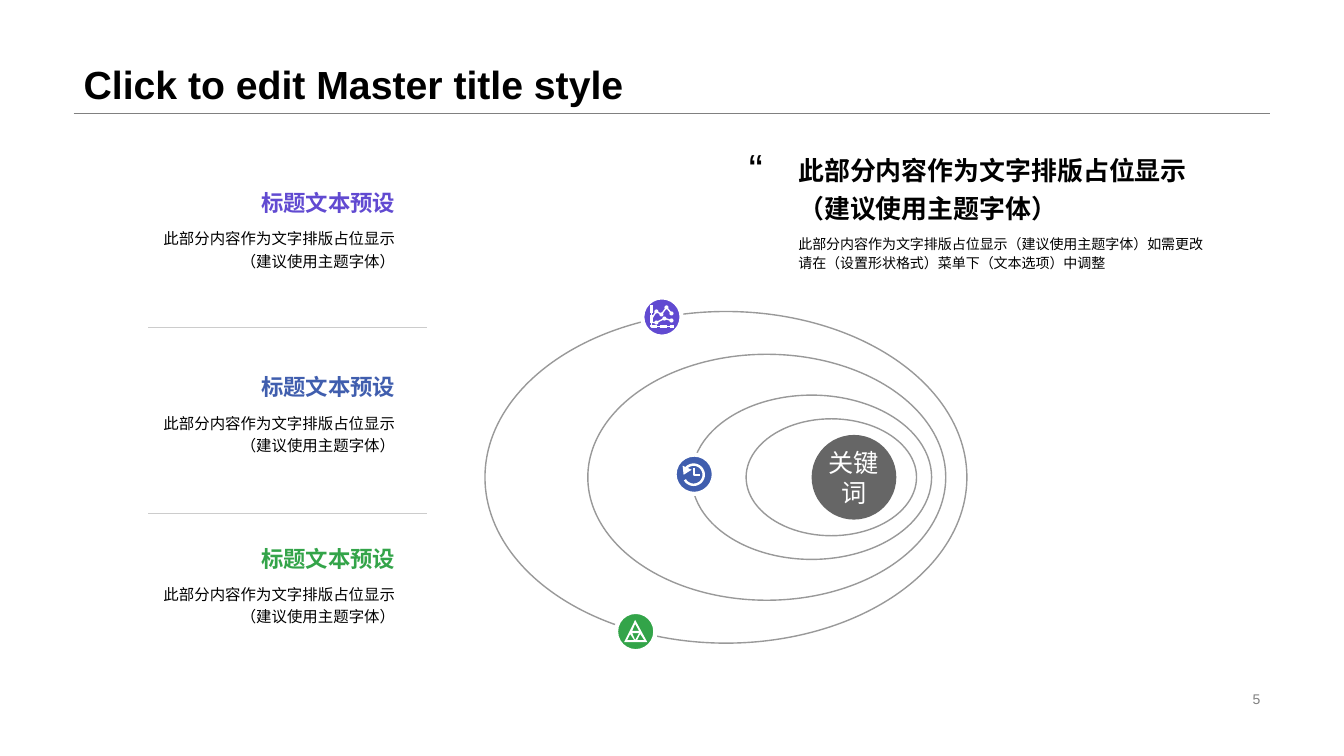
from math import cos, radians, sin

from lxml import etree
from pptx import Presentation
from pptx.dml.color import RGBColor
from pptx.enum import dml, shapes, text
from pptx.oxml.ns import qn
from pptx.util import Inches, Pt

BLACK = RGBColor(0x00, 0x00, 0x00)
WHITE = RGBColor(0xFF, 0xFF, 0xFF)
GREY = RGBColor(0x80, 0x80, 0x80)
CORE = RGBColor(0x66, 0x66, 0x66)
RING = RGBColor(0x99, 0x99, 0x99)
DIVIDER = RGBColor(0xCC, 0xCC, 0xCC)
PURPLE = RGBColor(0x61, 0x4A, 0xD1)
BLUE = RGBColor(0x40, 0x5E, 0xAE)
GREEN = RGBColor(0x33, 0xA4, 0x49)

LEFT, CENTER, RIGHT = text.PP_ALIGN.LEFT, text.PP_ALIGN.CENTER, text.PP_ALIGN.RIGHT
TOP, MIDDLE, BOTTOM = text.MSO_ANCHOR.TOP, text.MSO_ANCHOR.MIDDLE, text.MSO_ANCHOR.BOTTOM

HEADING = "标题文本预设"
SAMPLE = "此部分内容作为文字排版占位显示\v（建议使用主题字体）"
DETAIL = "此部分内容作为文字排版占位显示（建议使用主题字体）如需更改请在（设置形状格式）菜单下（文本选项）中调整"


def write(sp, words, size, color, bold=False, align=LEFT, anchor=MIDDLE, spacing=1.0):
    """Put one formatted paragraph into a shape."""
    tf = sp.text_frame
    tf.word_wrap = True
    tf.auto_size = text.MSO_AUTO_SIZE.NONE
    tf.vertical_anchor = anchor
    p = tf.paragraphs[0]
    p.text = words
    p.alignment = align
    p.line_spacing = spacing
    for r in p.runs:
        r.font.name = "Arial"
        r.font.size = Pt(size)
        r.font.bold = bold
        r.font.color.rgb = color


def add_text(s, x, y, w, h, words, size, color, **style):
    """Add a text box at the given place in inches."""
    box = s.shapes.add_textbox(Inches(x), Inches(y), Inches(w), Inches(h))
    write(box, words, size, color, **style)


def add_rule(s, x, y, w, color, width):
    """Add a horizontal line."""
    line = s.shapes.add_connector(
        shapes.MSO_CONNECTOR.STRAIGHT, Inches(x), Inches(y), Inches(x + w), Inches(y))
    line.line.color.rgb = color
    line.line.width = Pt(width)
    etree.SubElement(line._element.spPr, qn("a:effectLst"))


def add_ellipse(s, x, y, w, h, fill=None, line=None, width=1):
    """Add an ellipse with an optional fill and outline."""
    sp = s.shapes.add_shape(
        shapes.MSO_SHAPE.OVAL, Inches(x), Inches(y), Inches(w), Inches(h))
    sp.shadow.inherit = False
    if fill is None:
        sp.fill.background()
    else:
        sp.fill.solid()
        sp.fill.fore_color.rgb = fill
    if line is None:
        sp.line.fill.background()
    else:
        sp.line.color.rgb = line
        sp.line.width = Pt(width)
    return sp


def add_outline(s, x, y, contours, stroke=None, dash=None):
    """Draw white contours, stroked when a width is given and filled otherwise."""
    contours = [[(Inches(x + a), Inches(y + b)) for a, b in c] for c in contours]
    builder = s.shapes.build_freeform(*contours[0][0])
    for i, points in enumerate(contours):
        if i:
            builder.move_to(*points[0])
        builder.add_line_segments(points[1:], close=stroke is None)
    sp = builder.convert_to_shape()
    sp.shadow.inherit = False
    if stroke is None:
        sp.fill.solid()
        sp.fill.fore_color.rgb = WHITE
        sp.line.fill.background()
    else:
        sp.fill.background()
        sp.line.color.rgb = WHITE
        sp.line.width = Pt(stroke)
        sp.line.dash_style = dash


def draw_chart_icon(s, x, y):
    """Draw two plotted series on ticked axes."""
    axes = [(0.09, 0.08), (0.09, 0.29), (0.31, 0.29)]
    upper = [(0.1, 0.2), (0.14, 0.14), (0.19, 0.17), (0.24, 0.1), (0.29, 0.16)]
    lower = [(0.1, 0.25), (0.14, 0.25), (0.22, 0.21), (0.29, 0.23)]
    add_outline(s, x, y, [axes], 0.75)
    add_outline(s, x, y, [axes], 1.75, dml.MSO_LINE.SQUARE_DOT)
    for series in (upper, lower):
        add_outline(s, x, y, [series], 1)
        for a, b in series[1:]:
            add_ellipse(s, x + a - 0.02, y + b - 0.02, 0.04, 0.04, WHITE)


def draw_history_icon(s, x, y):
    """Draw a clock whose rim ends in an arrowhead."""
    rim = [(0.19 + 0.1 * cos(radians(a)), 0.2 + 0.1 * sin(radians(a)))
           for a in range(150, -141, -10)]
    add_outline(s, x, y, [rim], 1.75)
    add_outline(s, x, y, [[(0.19, 0.13), (0.19, 0.2), (0.25, 0.2)]], 1.25)
    add_outline(s, x, y, [[(0.08, 0.11), (0.17, 0.15), (0.09, 0.2)]])


def draw_triangle_icon(s, x, y):
    """Draw a triangle with four triangular openings."""
    add_outline(s, x, y, [
        [(0.19, 0.08), (0.08, 0.3), (0.31, 0.3)],
        [(0.19, 0.12), (0.23, 0.19), (0.16, 0.19)],
        [(0.11, 0.28), (0.14, 0.22), (0.18, 0.28)],
        [(0.16, 0.21), (0.23, 0.21), (0.19, 0.28)],
        [(0.24, 0.22), (0.28, 0.28), (0.21, 0.28)],
    ])


def add_header(s, x, y, w, h):
    """Place the title above its rule."""
    add_rule(s, x, y + h, w, GREY, 0.25)
    title = s.shapes.title
    title.left, title.top, title.width, title.height = (
        Inches(v) for v in (x, y, w, h))
    write(title, "Click to edit Master title style", 28, BLACK,
          bold=True, anchor=BOTTOM, spacing=0.9)


def add_orbits(s, x, y, w, h):
    """Draw the nested rings, the keyword disc and the icon badges."""
    middle = y + h / 2
    core = add_ellipse(s, x + 3.24, middle - 0.42, 0.84, 0.84, CORE)
    write(core, "关键词", 18, WHITE, align=CENTER)
    core.text_frame.margin_left = core.text_frame.margin_right = 0
    for dx, rw, rh in ((2.59, 1.69, 1.16), (2.05, 2.38, 1.63),
                       (1.02, 3.55, 2.44), (0, w, h)):
        add_ellipse(s, x + dx, middle - rh / 2, rw, rh, line=RING)
    for dx, dy, color, draw in ((1.88, 1.42, BLUE, draw_history_icon),
                                (1.56, -0.14, PURPLE, draw_chart_icon),
                                (1.3, 2.98, GREEN, draw_triangle_icon)):
        add_ellipse(s, x + dx, y + dy, 0.39, 0.39, color, WHITE, 3)
        draw(s, x + dx, y + dy)


def add_topic(s, x, y, w, color):
    """Add a coloured heading with its text below."""
    add_text(s, x, y, w, 0.35, HEADING, 16, color, bold=True, align=RIGHT, anchor=BOTTOM)
    add_text(s, x, y + 0.35, w, 0.79, SAMPLE, 11, BLACK,
             align=RIGHT, anchor=TOP, spacing=1.2)


def add_topics(s, x, w):
    """Stack the three topics with dividers between them."""
    for y, color in ((1.84, PURPLE), (3.67, BLUE), (5.37, GREEN)):
        add_topic(s, x, y, w, color)
    for y in (3.25, 5.09):
        add_rule(s, x + 0.22, y, w, DIVIDER, 0.5)


def add_quote(s, x, y, w):
    """Add the quotation mark, the statement and its detail."""
    add_text(s, x, y, 0.45, 0.54, "“", 30, BLACK)
    add_text(s, x + 0.49, y + 0.04, w - 0.49, 0.83, SAMPLE, 18.5, BLACK,
             bold=True, spacing=1.2)
    add_text(s, x + 0.49, y + 0.88, w - 0.49, 0.47, DETAIL, 10, BLACK, spacing=1.1)


def main():
    """Build and save the slide."""
    prs = Presentation()
    prs.slide_width, prs.slide_height = Inches(13.33), Inches(7.5)
    s = prs.slides.add_slide(prs.slide_layouts[5])
    add_header(s, 0.73, 0, 11.87, 1.12)
    add_orbits(s, 4.81, 3.09, 4.78, 3.29)
    add_topics(s, 1.25, 2.77)
    add_quote(s, 7.33, 1.39, 4.75)
    add_text(s, 9.42, 6.82, 3.18, 0.23, "5", 10, GREY, align=RIGHT)
    prs.save("out.pptx")


if __name__ == "__main__":
    main()
